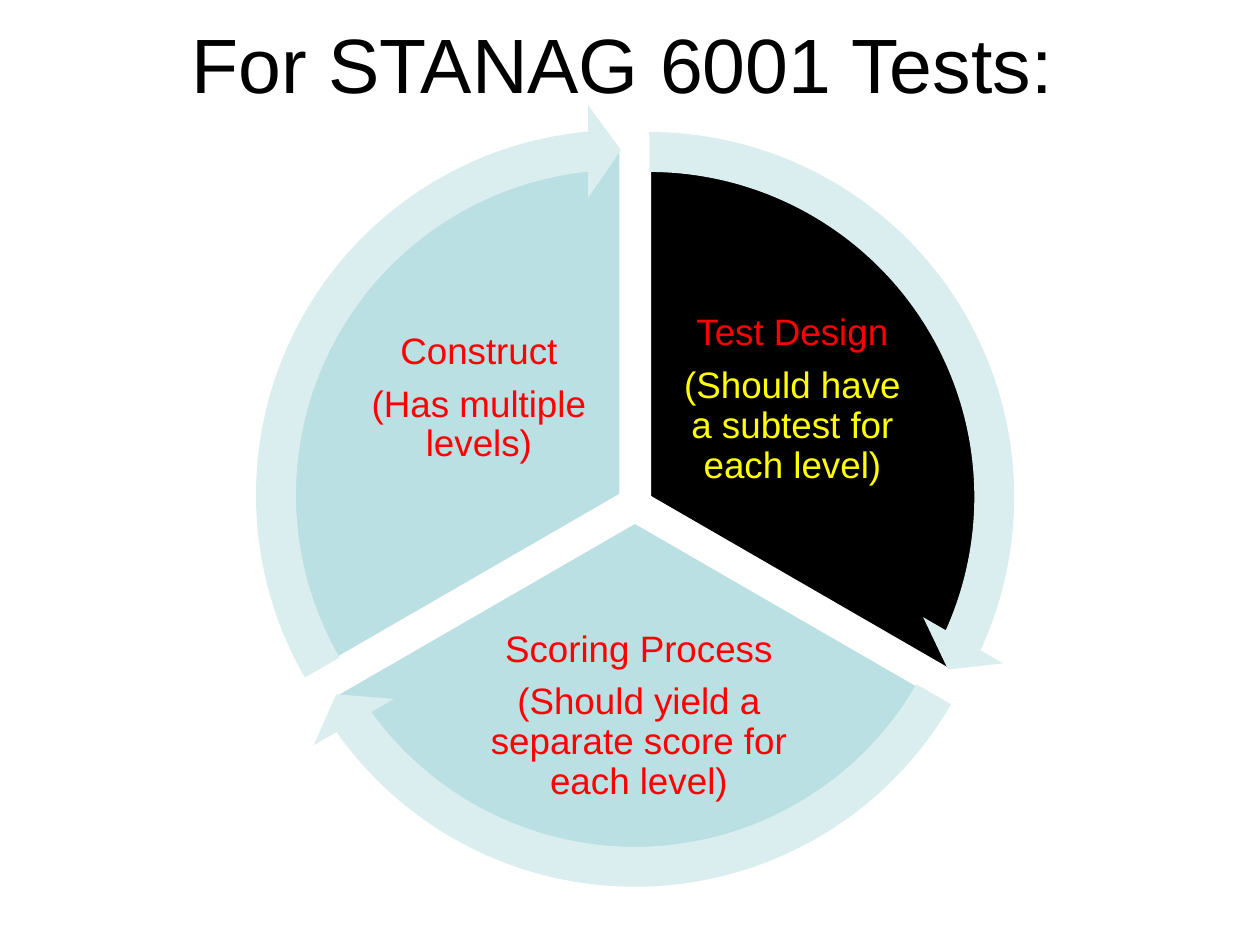
from pptx import Presentation
from pptx.dml.color import RGBColor
from pptx.enum.shapes import MSO_SHAPE as Kind
from pptx.enum.text import MSO_ANCHOR as Anchor, MSO_AUTO_SIZE as Fit, PP_ALIGN as Align
from pptx.util import Cm, Pt

BLACK = RGBColor(0x00, 0x00, 0x00)
WHITE = RGBColor(0xFF, 0xFF, 0xFF)
RED = RGBColor(0xFF, 0x00, 0x00)
YELLOW = RGBColor(0xFF, 0xFF, 0x00)
TEAL = RGBColor(0xBB, 0xE0, 0xE3)
PALE = RGBColor(0xDA, 0xED, 0xEF)

PIE, RING = 14.05, 15.77  # diameters in cm
SWEEP, HEAD = 120, 5.46   # degrees of a sector and of an arrowhead

FRAME = {"word_wrap": True, "vertical_anchor": Anchor.MIDDLE,
         "margin_left": Cm(0.08), "margin_right": Cm(0.08),
         "margin_top": Cm(0.08), "margin_bottom": Cm(0.08)}
PARA = {"alignment": Align.CENTER, "line_spacing": 0.9, "space_after": Pt(7.5)}
TITLE = {"word_wrap": True, "auto_size": Fit.SHAPE_TO_FIT_TEXT}

# Centre, start angle, fill, text box, lines with their colours
PARTS = [
    ((13.09, 10.02), 270, BLACK, (13.46, 5.97, 5.03, 4.19),
     [("Test Design", RED), ("(Should have a subtest for each level)", YELLOW)]),
    ((12.8, 10.52), 30, TEAL, (9.12, 12.6, 7.52, 3.68),
     [("Scoring Process", RED),
      ("(Should yield a separate score for each level)", RED)]),
    ((12.52, 9.98), 150, TEAL, (7.14, 5.94, 5.03, 4.19),
     [("Construct", RED), ("(Has multiple levels)", RED)]),
]


def put(obj, style):
    for name, val in style.items():
        setattr(obj, name, val)


def turn(deg):
    """Angle in the unit that shape adjustments use."""
    return deg % 360 * 0.6


def add_round(shapes, kind, mid, size, fill, adjs):
    x, y = (Cm(c - size / 2) for c in mid)
    shape = shapes.add_shape(kind, x, y, Cm(size), Cm(size))
    shape.shadow.inherit = False
    shape.fill.solid()
    shape.fill.fore_color.rgb = fill
    for i, val in enumerate(adjs):
        shape.adjustments[i] = val
    return shape


def add_pie(shapes, mid, start, fill):
    adjs = [turn(start), turn(start + SWEEP)]
    pie = add_round(shapes, Kind.PIE, mid, PIE, fill, adjs)
    pie.line.color.rgb = WHITE
    pie.line.width = Pt(2)


def add_arrow(shapes, mid, start):
    adjs = [5.1 / 100, turn(HEAD), turn(start + SWEEP - HEAD), turn(start), 5.9 / 100]
    arrow = add_round(shapes, Kind.CIRCULAR_ARROW, mid, RING, PALE, adjs)
    arrow.line.fill.background()


def add_text(shapes, box, lines, size, frame, para):
    text = shapes.add_textbox(*map(Cm, box)).text_frame
    put(text, frame)
    for i, (words, color) in enumerate(lines):
        par = text.add_paragraph() if i else text.paragraphs[0]
        put(par, para)
        run = par.add_run()
        run.text = words
        put(run.font, {"name": "Arial", "size": Pt(size)})
        run.font.color.rgb = color


def main():
    deck = Presentation()
    put(deck, {"slide_width": Cm(25.4), "slide_height": Cm(19.05)})
    slide = deck.slides.add_slide(deck.slide_layouts[6])

    # Cycle: sectors with their text, then the arrows around them
    cycle = slide.shapes.add_group_shape().shapes
    for mid, start, fill, box, lines in PARTS:
        add_pie(cycle, mid, start, fill)
        add_text(cycle, box, lines, 21, FRAME, PARA)
    for mid, start, *_ in PARTS:
        add_arrow(cycle, mid, start)

    # Title
    add_text(slide.shapes, (3.61, 0.2, 19.69, 2.13),
             [("For STANAG 6001 Tests:", BLACK)], 44, TITLE, {})
    deck.save("out.pptx")


if __name__ == "__main__":
    main()
